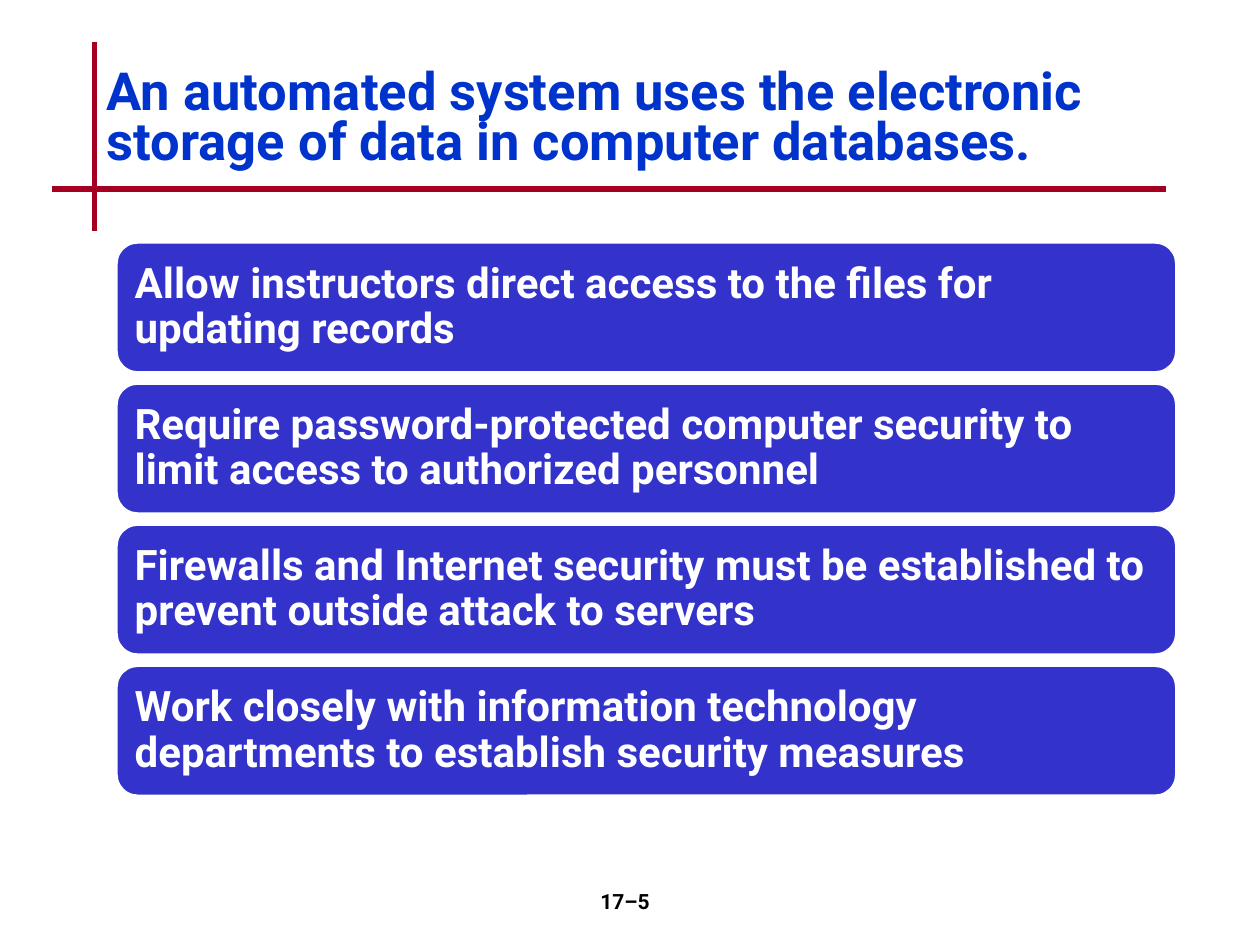
"""Build the slide on security of automated record systems."""
from pptx import Presentation
from pptx import util as u
from pptx.dml.color import RGBColor
from pptx.enum import shapes, text
from pptx.oxml.ns import qn
from lxml import etree

TITLE = "An automated system uses the electronic storage of data in computer databases."
MEASURES = [
    "Allow instructors direct access to the files for updating records",
    "Require password-protected computer security to limit access to authorized personnel",
    "Firewalls and Internet security must be established to prevent outside attack to servers",
    "Work closely with information technology departments to establish security measures",
]
PAGE_NUMBER = "17–5"
RULES = [(54, 23.76, 54, 131.76), (30, 108, 666, 108)]

FONT = "Roboto"
RED = RGBColor(0xA5, 0x00, 0x21)
TITLE_BLUE = RGBColor(0x00, 0x33, 0xCC)
PANEL_BLUE = RGBColor(0x33, 0x33, 0xCC)
WHITE = RGBColor(0xFF, 0xFF, 0xFF)
BLACK = RGBColor(0x00, 0x00, 0x00)

PANEL_LEFT, PANEL_TOP, PANEL_WIDTH, PANEL_HEIGHT = 66.24, 138.24, 606.24, 74.88
PANEL_PITCH = 80.64


def write(holder, words, size, color, spacing=1.0,
          align=text.PP_ALIGN.LEFT, anchor=text.MSO_ANCHOR.MIDDLE):
    frame = holder.text_frame
    frame.word_wrap = True
    frame.vertical_anchor = anchor
    paragraph = frame.paragraphs[0]
    paragraph.alignment = align
    paragraph.line_spacing = spacing
    run = paragraph.add_run()
    run.text = words
    run.font.name = FONT
    run.font.size = u.Pt(size)
    run.font.bold = True
    run.font.color.rgb = color


def points(*lengths):
    return [u.Pt(length) for length in lengths]


def add_rule(slide, ends):
    rule = slide.shapes.add_connector(shapes.MSO_CONNECTOR.STRAIGHT, *points(*ends))
    rule.line.color.rgb = RED
    rule.line.width = u.Pt(3)
    etree.SubElement(rule._element.spPr, qn("a:effectLst"))


def add_panel(slide, top, words):
    panel = slide.shapes.add_shape(
        shapes.MSO_SHAPE.ROUNDED_RECTANGLE,
        *points(PANEL_LEFT, top, PANEL_WIDTH, PANEL_HEIGHT))
    panel.shadow.inherit = False
    panel.fill.solid()
    panel.fill.fore_color.rgb = PANEL_BLUE
    panel.line.color.rgb = WHITE
    panel.line.width = u.Pt(2)
    write(panel, words, size=24, color=WHITE, spacing=0.9)


def main():
    deck = Presentation()
    deck.slide_width, deck.slide_height = points(720, 540)
    slide = deck.slides.add_slide(deck.slide_layouts[6])
    for ends in RULES:
        add_rule(slide, ends)
    for row, measure in enumerate(MEASURES):
        add_panel(slide, PANEL_TOP + row * PANEL_PITCH, measure)
    title = slide.shapes.add_textbox(*points(54, 23.76, 612, 90))
    write(title, TITLE, size=30, color=TITLE_BLUE, spacing=0.8)
    page = slide.shapes.add_textbox(*points(282.24, 504, 149.76, 36))
    write(page, PAGE_NUMBER, size=12, color=BLACK,
          align=text.PP_ALIGN.CENTER, anchor=text.MSO_ANCHOR.TOP)
    deck.save("out.pptx")


if __name__ == "__main__":
    main()
